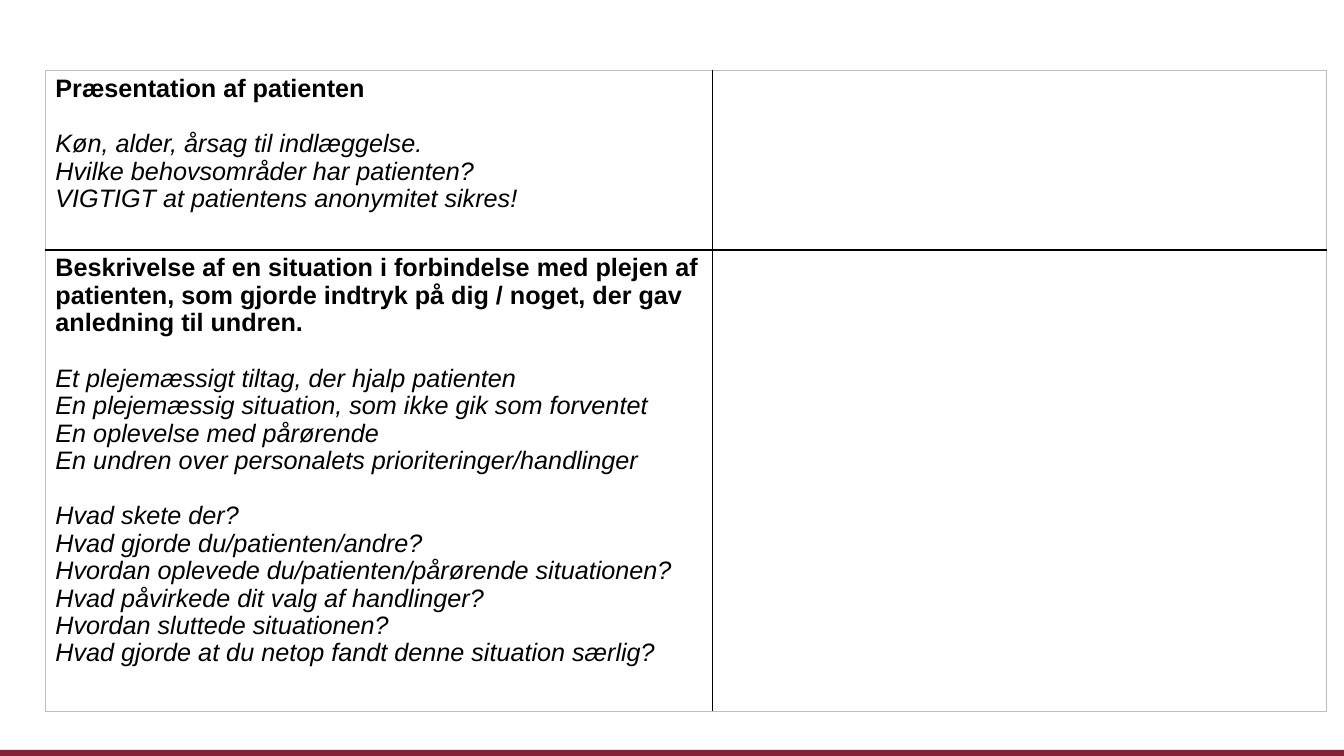
from pptx import Presentation
from pptx.dml.color import RGBColor
from pptx.enum.shapes import MSO_SHAPE
from pptx.util import Pt
from lxml.etree import SubElement
from pptx.oxml.ns import qn

COLORS = {"bar": "822433", "text": "000000", "inner": "000000", "outer": "BFBFBF"}
LINE_HEIGHT = 20.1

presentation = Presentation()
presentation.slide_width = Pt(960)
presentation.slide_height = Pt(540)
slide = presentation.slides.add_slide(presentation.slide_layouts[6])


def write(paragraph, text, size=18, bold=False, italic=False, before=0):
    paragraph.line_spacing = 0.97
    paragraph.space_before = Pt(before)
    run = paragraph.add_run()
    run.text = text
    run.font.name = "Arial"
    run.font.size = Pt(size)
    run.font.bold = bold
    run.font.italic = italic
    run.font.color.rgb = RGBColor.from_string(COLORS["text"])


def draw_border(cell, side, color, width):
    line = SubElement(cell._tc.get_or_add_tcPr(), qn(f"a:{side}"), w=str(Pt(width)))
    fill = SubElement(line, qn("a:solidFill"))
    SubElement(fill, qn("a:srgbClr"), val=color)


bar = slide.shapes.add_shape(MSO_SHAPE.RECTANGLE, Pt(0), Pt(535.7), Pt(960), Pt(4.3))
bar.shadow.inherit = False
bar.fill.solid()
bar.fill.fore_color.rgb = RGBColor.from_string(COLORS["bar"])
bar.line.fill.background()

sections = [
    ("Præsentation af patienten", [
        ["Køn, alder, årsag til indlæggelse.",
         "Hvilke behovsområder har patienten?",
         "VIGTIGT at patientens anonymitet sikres!"],
    ]),
    ("Beskrivelse af en situation i forbindelse med plejen af patienten, "
     "som gjorde indtryk på dig / noget, der gav anledning til undren.", [
        ["Et plejemæssigt tiltag, der hjalp patienten",
         "En plejemæssig situation, som ikke gik som forventet",
         "En oplevelse med pårørende",
         "En undren over personalets prioriteringer/handlinger"],
        ["Hvad skete der?",
         "Hvad gjorde du/patienten/andre?",
         "Hvordan oplevede du/patienten/pårørende situationen?",
         "Hvad påvirkede dit valg af handlinger?",
         "Hvordan sluttede situationen?",
         "Hvad gjorde at du netop fandt denne situation særlig?"],
    ]),
]
column_widths = [476.5, 438.5]
row_heights = [128.4, 329.4]

table = slide.shapes.add_table(
    2, 2, Pt(32.4), Pt(50.2), Pt(sum(column_widths)), Pt(sum(row_heights))).table
table.first_row = False
table.horz_banding = False
for column, width in zip(table.columns, column_widths):
    column.width = Pt(width)
for row, height in zip(table.rows, row_heights):
    row.height = Pt(height)

for row_index, (heading, groups) in enumerate(sections):
    for column_index in range(2):
        cell = table.cell(row_index, column_index)
        cell.margin_left = cell.margin_right = Pt(7.2)
        cell.margin_top = cell.margin_bottom = Pt(3.6)
        inner_sides = {"lnR" if column_index == 0 else "lnL",
                       "lnB" if row_index == 0 else "lnT"}
        for side in ("lnL", "lnR", "lnT", "lnB"):
            if side in inner_sides:
                draw_border(cell, side, COLORS["inner"], 1)
            else:
                draw_border(cell, side, COLORS["outer"], 0.75)
        cell.fill.background()

    text_frame = table.cell(row_index, 0).text_frame
    write(text_frame.paragraphs[0], heading, bold=True)
    for group in groups:
        for index, question in enumerate(group):
            write(text_frame.add_paragraph(), question, italic=True,
                  before=LINE_HEIGHT if index == 0 else 0)

presentation.save("out.pptx")
